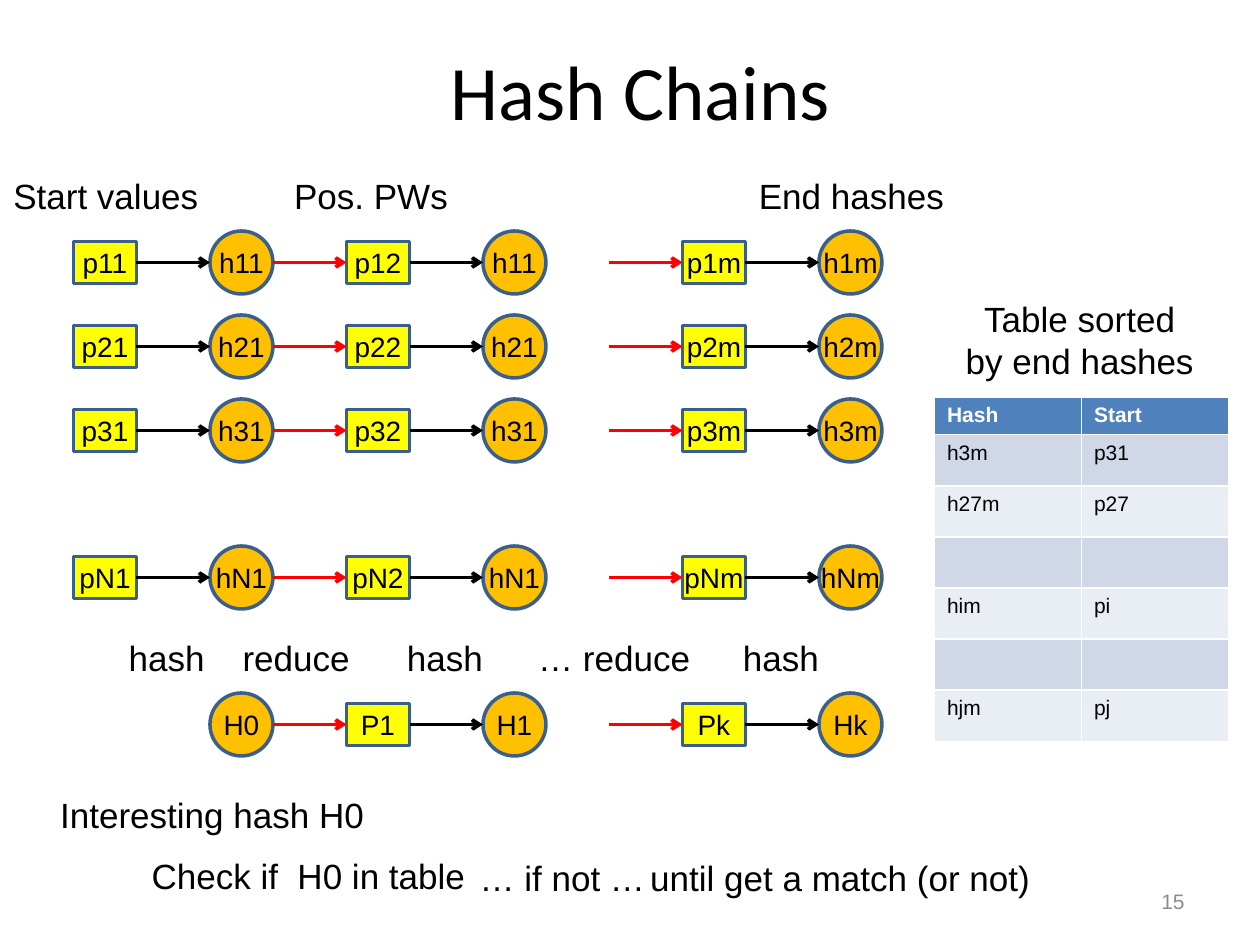
"""Build the Hash Chains slide: chains of passwords and hashes with their lookup table."""
from lxml.etree import SubElement
from pptx import Presentation
from pptx.dml.color import RGBColor as RGB
from pptx.enum.shapes import MSO_CONNECTOR as LINK, MSO_SHAPE as FORM
from pptx.enum.text import MSO_ANCHOR as ANCHOR, MSO_AUTO_SIZE as AUTO, PP_ALIGN as ALIGN
from pptx.oxml.ns import qn
from pptx.util import Pt

BLACK, WHITE, RED = RGB(0, 0, 0), RGB(255, 255, 255), RGB(255, 0, 0)
YELLOW, ORANGE, EDGE = RGB(255, 255, 0), RGB(255, 192, 0), RGB(0x3A, 0x5F, 0x8C)
HEAD, BANDS = RGB(0x4F, 0x81, 0xBD), (RGB(0xE9, 0xED, 0xF4), RGB(0xD0, 0xD8, 0xE8))
GREY = RGB(0x8C, 0x8C, 0x8C)
LEFT, MID, RIGHT = ALIGN.LEFT, ALIGN.CENTER, ALIGN.RIGHT

TITLE = "Hash Chains"
CHAINS = [
    (150, ["p11", "h11", "p12", "h11", "p1m", "h1m"]),
    (198, ["p21", "h21", "p22", "h21", "p2m", "h2m"]),
    (246, ["p31", "h31", "p32", "h31", "p3m", "h3m"]),
    (330, ["pN1", "hN1", "pN2", "hN1", "pNm", "hNm"]),
    (414, ["", "H0", "P1", "H1", "Pk", "Hk"]),
]
LABELS = [
    ("Start values", 0, 96, 121, MID),
    ("Pos. PWs", 160.5, 96, 103, MID),
    ("End hashes", 426, 96, 121, MID),
    ("hash", 66, 360, 58.5, MID),
    ("reduce", 131, 360, 76.5, MID),
    ("hash", 225, 360, 58.5, MID),
    ("… reduce", 300, 360, 102, MID),
    ("hash", 417, 360, 58.5, MID),
    ("Table sorted\nby end hashes", 544, 166.5, 146, MID),
    ("Interesting hash H0", 26.5, 450, 189.5, MID),
    ("Check if  H0 in table", 78, 484.5, 195, RIGHT),
    ("… if not …", 267, 486, 109.5, LEFT),
    ("until get a match (or not)", 364.5, 486, 232.5, LEFT),
]
TABLE = [("Hash", "Start"), ("h3m", "p31"), ("h27m", "p27"), ("", ""),
         ("him", "pi"), ("", ""), ("hjm", "pj")]

COLS = [42, 120, 198, 276, 390, 468]
NODE, BOX, GAP = 36, 24, 42


def style(frame, size, color=BLACK, align=MID, face="Arial", bold=False):
    for par in frame.paragraphs:
        par.alignment = align
        par.font.color.rgb = color
        for key, val in {"size": Pt(size), "name": face, "bold": bold}.items():
            setattr(par.font, key, val)


def label(slide, text, x, y, w, h, align, size=20, color=BLACK):
    frame = slide.shapes.add_textbox(Pt(x), Pt(y), Pt(w), Pt(h)).text_frame
    frame.text = text
    frame.word_wrap = False
    style(frame, size, color, align)
    return frame


def node(slide, text, x, mid, is_hash):
    form, high, fill = (FORM.OVAL, NODE, ORANGE) if is_hash else (FORM.RECTANGLE, BOX, YELLOW)
    shape = slide.shapes.add_shape(form, Pt(x), Pt(mid - high / 2), Pt(NODE), Pt(high))
    shape.shadow.inherit = False
    shape.fill.solid()
    shape.fill.fore_color.rgb = fill
    shape.line.color.rgb = EDGE
    shape.line.width = Pt(2)
    frame = shape.text_frame
    frame.text = text
    frame.word_wrap = False
    frame.vertical_anchor = ANCHOR.MIDDLE
    if not is_hash:
        frame.margin_left = frame.margin_right = 0
    style(frame, 16)
    return shape


def arrow(slide, x, mid, color):
    link = slide.shapes.add_connector(LINK.STRAIGHT, Pt(x - GAP), Pt(mid), Pt(x), Pt(mid))
    link.line.color.rgb = color
    link.line.width = Pt(2)
    SubElement(link.line._ln, qn("a:tailEnd"), type="arrow")
    SubElement(link._element.spPr, qn("a:effectLst"))
    return link


def chain(slide, mid, names):
    nodes = [node(slide, name, x, mid, i % 2) if name else None
             for i, (name, x) in enumerate(zip(names, COLS))]
    for i in range(1, len(nodes)):
        if nodes[i - 1] is None:
            continue
        if i % 2:
            arrow(slide, COLS[i], mid, BLACK).begin_connect(nodes[i - 1], 3)
        else:
            arrow(slide, COLS[i], mid, RED).end_connect(nodes[i], 1)


def table(slide):
    grid = slide.shapes.add_table(len(TABLE), 2, Pt(534), Pt(226.8), Pt(168), Pt(196.8)).table
    for r, row in enumerate(TABLE):
        grid.rows[r].height = Pt(29.2 if r else 21.6)
        for c, text in enumerate(row):
            cell = grid.cell(r, c)
            cell.text = text
            cell.fill.solid()
            cell.fill.fore_color.rgb = BANDS[r % 2] if r else HEAD
            style(cell.text_frame, 12, BLACK if r else WHITE, LEFT, bold=not r)


def main():
    prs = Presentation()
    prs.slide_width, prs.slide_height = Pt(720), Pt(540)
    slide = prs.slides.add_slide(prs.slide_layouts[5])
    title = slide.shapes.title
    for key, val in {"left": 24, "top": 6, "width": 684, "height": 90}.items():
        setattr(title, key, Pt(val))
    title.text_frame.text = TITLE
    title.text_frame.vertical_anchor = ANCHOR.MIDDLE
    style(title.text_frame, 44, face="Calibri")
    for mid, names in CHAINS:
        chain(slide, mid, names)
    table(slide)
    for text, x, y, w, align in LABELS:
        frame = label(slide, text, x, y, w, 31.5 + 24 * text.count("\n"), align)
        frame.auto_size = AUTO.SHAPE_TO_FIT_TEXT
    number = label(slide, "15", 516, 500.5, 168, 28.75, RIGHT, 12, GREY)
    number.word_wrap = True
    number.vertical_anchor = ANCHOR.MIDDLE
    prs.save("out.pptx")


if __name__ == "__main__":
    main()
